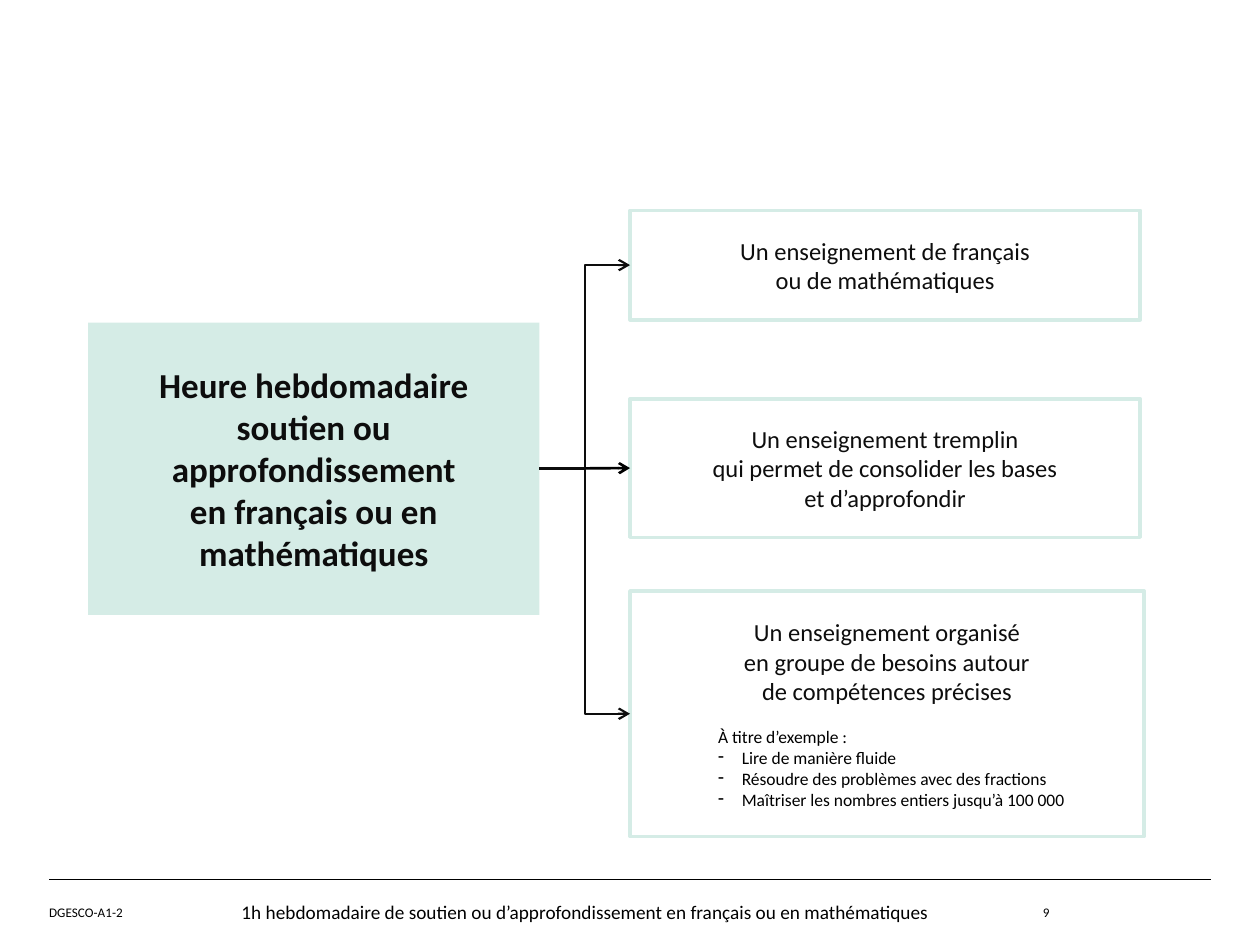
from lxml.etree import SubElement
from pptx import Presentation
from pptx.dml.color import RGBColor
from pptx.enum.shapes import MSO_CONNECTOR, MSO_SHAPE
from pptx.enum.text import MSO_ANCHOR, MSO_AUTO_SIZE, PP_ALIGN
from pptx.oxml.ns import qn
from pptx.util import Pt

COLORS = {"mint": "D5ECE6", "ink": "0D0D0D", "black": "000000"}
FONT = "Calibri"

TOPIC = [
    "Heure hebdomadaire",
    "soutien ou approfondissement",
    "en français ou en mathématiques",
]
TOPIC_PLACE = (50.4, 184.3, 257.8, 167)

BRANCH_LEFT = 360
BRANCHES = [  # text, top, width, height, connector
    ("Un enseignement de français\nou de mathématiques",
     120.2, 291.6, 62.6, MSO_CONNECTOR.ELBOW),
    ("Un enseignement tremplin\nqui permet de consolider les bases\net d’approfondir",
     227.9, 291.6, 79.2, MSO_CONNECTOR.STRAIGHT),
    ("Un enseignement organisé\nen groupe de besoins autour\nde compétences précises",
     337.7, 293.8, 140.4, MSO_CONNECTOR.ELBOW),
]
EXAMPLES_INTRO = "À titre d’exemple :"
EXAMPLES = [
    "Lire de manière fluide",
    "Résoudre des problèmes avec des fractions",
    "Maîtriser les nombres entiers jusqu’à 100 000",
]

FOOTER_RULE = (28.1, 502.6, 691.9, 502.6)
FOOTER = [  # text, place, size, alignment, inset across, inset down
    ("DGESCO-A1-2", (28.1, 502.6, 465.1, 37.4), 7.5, PP_ALIGN.LEFT, 0, 0),
    ("9", (493.2, 502.6, 106.6, 37.4), 7.5, PP_ALIGN.RIGHT, 0, 0),
    ("1h hebdomadaire de soutien ou d’approfondissement en français ou en mathématiques",
     (57.6, 510.5, 553.7, 20.9), 11, PP_ALIGN.CENTER, 7.2, 3.6),
]


def rgb(name):
    return RGBColor.from_string(COLORS[name])


def set_frame(frame, across, down, anchor=MSO_ANCHOR.MIDDLE, auto_size=MSO_AUTO_SIZE.NONE):
    formats = {
        "word_wrap": True, "auto_size": auto_size, "vertical_anchor": anchor,
        "margin_left": Pt(across), "margin_right": Pt(across),
        "margin_top": Pt(down), "margin_bottom": Pt(down),
    }
    for key, value in formats.items():
        setattr(frame, key, value)


def write(paragraph, text, size, color="black", align=PP_ALIGN.LEFT, bold=False):
    paragraph.text = text
    paragraph.alignment = align
    for key, value in {"name": FONT, "size": Pt(size), "bold": bold}.items():
        setattr(paragraph.font, key, value)
    paragraph.font.color.rgb = rgb(color)


def indent(paragraph, left, hanging=0, bullet=None):
    props = paragraph._p.get_or_add_pPr()
    props.set("marL", str(Pt(left)))
    props.set("indent", str(Pt(-hanging)))
    if bullet:
        SubElement(props, qn("a:buChar"), char=bullet)


def add_box(slide, kind, place):
    box = slide.shapes.add_shape(kind, *map(Pt, place))
    box.shadow.inherit = False
    return box


def add_line(slide, kind, ends, color, width, arrow=False):
    connector = slide.shapes.add_connector(kind, *map(Pt, ends))
    connector.line.color.rgb = rgb(color)
    connector.line.width = Pt(width)
    if arrow:
        SubElement(connector.line._get_or_add_ln(), qn("a:tailEnd"), type="arrow")
    SubElement(connector._element.spPr, qn("a:effectLst"))
    return connector


def add_topic(slide):
    topic = add_box(slide, MSO_SHAPE.ROUNDED_RECTANGLE, TOPIC_PLACE)
    topic.adjustments[0] = 0
    topic.fill.solid()
    topic.fill.fore_color.rgb = rgb("mint")
    topic.line.fill.background()
    frame = topic.text_frame
    set_frame(frame, 7.2, 3.6)
    for number, text in enumerate(TOPIC):
        paragraph = frame.add_paragraph() if number else frame.paragraphs[0]
        write(paragraph, text, 20, "ink", PP_ALIGN.CENTER, bold=True)
    return topic


def add_branch(slide, text, top, width, height):
    branch = add_box(slide, MSO_SHAPE.RECTANGLE, (BRANCH_LEFT, top, width, height))
    branch.fill.background()
    branch.line.color.rgb = rgb("mint")
    branch.line.width = Pt(2)
    set_frame(branch.text_frame, 14.4, 14.4, auto_size=MSO_AUTO_SIZE.SHAPE_TO_FIT_TEXT)
    write(branch.text_frame.paragraphs[0], text, 14, "ink", PP_ALIGN.CENTER)
    return branch


def add_examples(frame):
    frame.paragraphs[0].space_after = Pt(12)
    intro = frame.add_paragraph()
    indent(intro, 36)
    write(intro, EXAMPLES_INTRO, 10)
    for example in EXAMPLES:
        item = frame.add_paragraph()
        indent(item, 49.5, 13.5, "-")
        write(item, example, 10)


def add_footer(slide):
    add_line(slide, MSO_CONNECTOR.STRAIGHT, FOOTER_RULE, "black", 0.8)
    for text, place, size, align, across, down in FOOTER:
        note = slide.shapes.add_textbox(*map(Pt, place))
        set_frame(note.text_frame, across, down)
        write(note.text_frame.paragraphs[0], text, size, align=align)


def main():
    deck = Presentation()
    deck.slide_width, deck.slide_height = Pt(720), Pt(540)
    slide = deck.slides.add_slide(deck.slide_layouts[6])

    topic = add_topic(slide)
    left, top, width, height = TOPIC_PLACE
    start = (left + width, top + height / 2)
    for text, top, width, height, kind in BRANCHES:
        branch = add_branch(slide, text, top, width, height)
        straight = kind == MSO_CONNECTOR.STRAIGHT
        end = (BRANCH_LEFT, start[1] if straight else top + height / 2)
        arrow = add_line(slide, kind, start + end, "black" if straight else "ink",
                         1.5 if straight else 1.25, arrow=True)
        arrow.begin_connect(topic, 3)
        arrow.end_connect(branch, 1)
    add_examples(branch.text_frame)
    add_footer(slide)
    deck.save("out.pptx")


if __name__ == "__main__":
    main()
